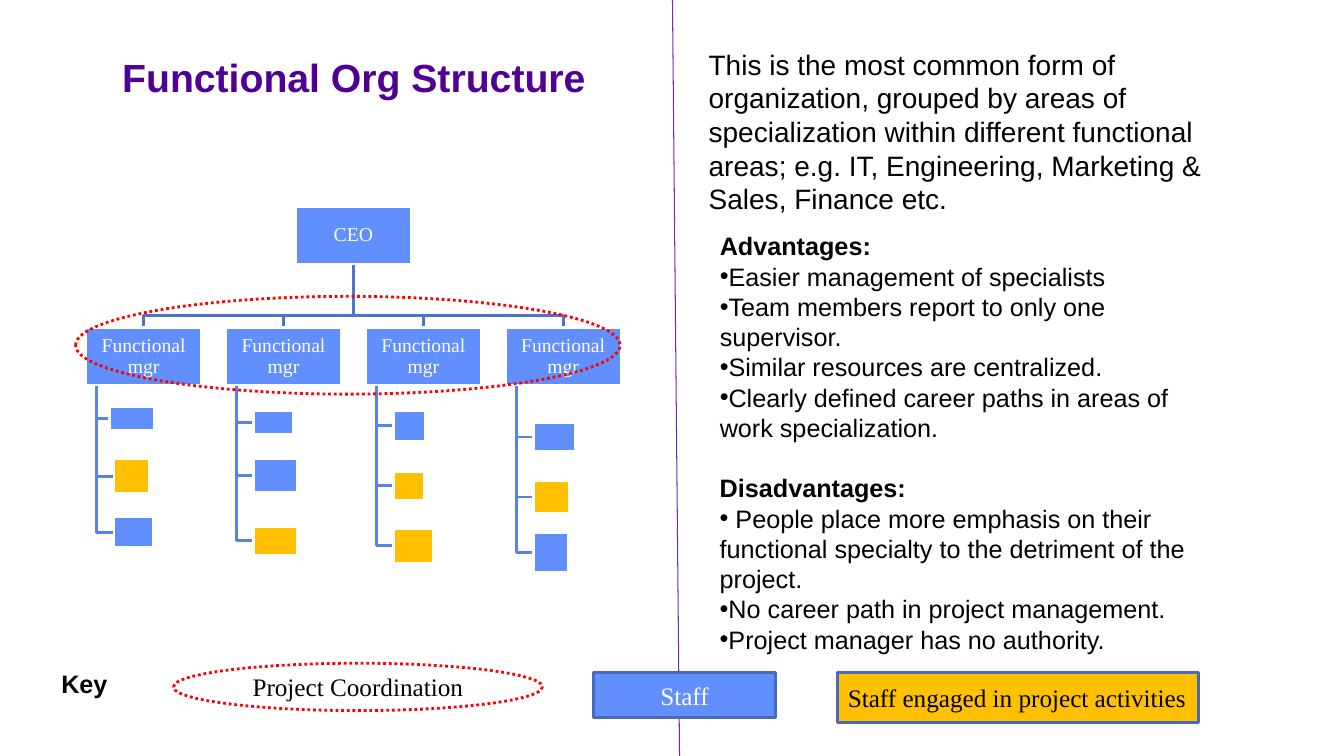
from dataclasses import dataclass

from lxml.etree import SubElement
from pptx import Presentation
from pptx.dml.color import RGBColor
from pptx.enum.dml import MSO_LINE
from pptx.enum.shapes import MSO_CONNECTOR, MSO_SHAPE
from pptx.enum.text import MSO_ANCHOR, MSO_AUTO_SIZE, PP_ALIGN
from pptx.oxml.ns import qn
from pptx.util import Inches, Pt

BLUE = RGBColor(0x61, 0x8F, 0xFD)
AMBER = RGBColor(0xFF, 0xC0, 0x00)
WHITE = RGBColor(0xFF, 0xFF, 0xFF)
BLACK = RGBColor(0x00, 0x00, 0x00)
RED = RGBColor(0xFF, 0x00, 0x00)
EDGE = RGBColor(0x48, 0x6A, 0xBB)
TOP_LINK = RGBColor(0x4E, 0x73, 0xCB)
STAFF_LINK = RGBColor(0x58, 0x82, 0xE6)
PURPLE = RGBColor(0x50, 0x00, 0x93)
DIVIDER = RGBColor(0x70, 0x30, 0xA0)
SANS, SERIF = "Arial", "Times New Roman"

CARD_WIDTH, CARD_HEIGHT = 1.15, 0.57
CEO_LEFT, CEO_TOP = 2.93, 2.05
MANAGER_LEFT, MANAGER_TOP, MANAGER_PITCH = 0.85, 3.25, 1.387
BUS_Y = 3.13
SPINE_OFFSET, STAFF_OFFSET = 0.11, 0.28


@dataclass
class Staff:
    top: float
    width: float
    height: float
    fill: RGBColor = BLUE
    shift: float = 0


@dataclass
class Passage:
    left: float
    top: float
    width: float
    height: float
    heading: str
    bullets: tuple[str, ...] = ()
    size: int = 18
    bold: bool = True


TEAMS = [
    [Staff(4.03, 0.44, 0.24, shift=-0.04), Staff(4.55, 0.35, 0.35, AMBER), Staff(5.13, 0.39, 0.3)],
    [Staff(4.07, 0.39, 0.24), Staff(4.55, 0.43, 0.34), Staff(5.22, 0.43, 0.29, AMBER)],
    [Staff(4.07, 0.32, 0.31), Staff(4.68, 0.31, 0.28, AMBER), Staff(5.24, 0.39, 0.35, AMBER)],
    [Staff(4.19, 0.42, 0.29), Staff(4.77, 0.36, 0.32, AMBER), Staff(5.28, 0.35, 0.4)],
]

PASSAGES = [
    Passage(6.93, 0.42, 5.51, 1.78,
            "This is the most common form of organization, grouped by areas of specialization within "
            "different functional areas; e.g. IT, Engineering, Marketing & Sales, Finance etc.",
            size=20, bold=False),
    Passage(7.04, 2.24, 4.92, 2.22, "Advantages:", (
        "Easier management of specialists",
        "Team members report to only one supervisor.",
        "Similar resources are centralized.",
        "Clearly defined career paths in areas of work specialization.")),
    Passage(7.04, 4.64, 4.84, 2.22, "Disadvantages:", (
        " People place more emphasis on their functional specialty to the detriment of the project.",
        "No career path in project management.",
        "Project manager has no authority.")),
    Passage(0.51, 6.58, 0.94, 0.4, "Key"),
]


def write(para, text: str, *, font: str = SANS, size: int = 18, color: RGBColor = BLACK,
          bold: bool = False, align: PP_ALIGN = PP_ALIGN.LEFT, spacing: float = 1.0,
          bullet: bool = False) -> None:
    """Fill a paragraph with one formatted span."""
    para.alignment = align
    para.line_spacing = spacing
    if bullet:
        properties = para._p.get_or_add_pPr()
        properties.set("marL", "0")
        properties.set("indent", "0")
        SubElement(properties, qn("a:buFont"), typeface=SANS)
        SubElement(properties, qn("a:buChar"), char="•")
    span = para.add_run()
    span.text = text
    span.font.name, span.font.size, span.font.bold = font, Pt(size), bold
    span.font.color.rgb = color


def add_box(shapes, left: float, top: float, width: float, height: float, *,
            kind: MSO_SHAPE = MSO_SHAPE.RECTANGLE, fill: RGBColor | None = BLUE,
            line: RGBColor = WHITE, dotted: bool = False):
    box = shapes.add_shape(kind, Inches(left), Inches(top), Inches(width), Inches(height))
    box.shadow.inherit = False
    if fill is None:
        box.fill.background()
    else:
        box.fill.solid()
        box.fill.fore_color.rgb = fill
    box.line.color.rgb = line
    box.line.width = Pt(2)
    if dotted:
        box.line.dash_style = MSO_LINE.ROUND_DOT
    box.text_frame.vertical_anchor = MSO_ANCHOR.MIDDLE
    return box


def add_card(shapes, left: float, top: float, text: str) -> None:
    frame = add_box(shapes, left, top, CARD_WIDTH, CARD_HEIGHT).text_frame
    frame.margin_left = frame.margin_right = Inches(0.01)
    frame.margin_top = frame.margin_bottom = Inches(0.01)
    write(frame.paragraphs[0], text, font=SERIF, size=14, color=WHITE,
          align=PP_ALIGN.CENTER, spacing=0.9)


def add_link(shapes, points: list[tuple[float, float]], color: RGBColor) -> None:
    corners = [(Inches(x), Inches(y)) for x, y in points]
    builder = shapes.build_freeform(*corners[0])
    builder.add_line_segments(corners[1:], close=False)
    link = builder.convert_to_shape()
    link.shadow.inherit = False
    link.fill.background()
    link.line.color.rgb = color
    link.line.width = Pt(2)


def add_passage(shapes, passage: Passage) -> None:
    box = shapes.add_textbox(Inches(passage.left), Inches(passage.top),
                             Inches(passage.width), Inches(passage.height))
    frame = box.text_frame
    frame.word_wrap = True
    write(frame.paragraphs[0], passage.heading, size=passage.size, bold=passage.bold)
    for bullet in passage.bullets:
        write(frame.add_paragraph(), bullet, size=passage.size, bullet=True)


def add_org_chart(shapes) -> None:
    lefts = [MANAGER_LEFT + MANAGER_PITCH * column for column in range(len(TEAMS))]
    ceo_middle = CEO_LEFT + CARD_WIDTH / 2
    # Links lie behind the boxes
    for left, team in zip(lefts, TEAMS):
        middle, spine = left + CARD_WIDTH / 2, left + SPINE_OFFSET
        add_link(shapes, [(ceo_middle, CEO_TOP + CARD_HEIGHT), (ceo_middle, BUS_Y),
                          (middle, BUS_Y), (middle, MANAGER_TOP)], TOP_LINK)
        for staff in team:
            y = staff.top + staff.height / 2
            add_link(shapes, [(spine, MANAGER_TOP + CARD_HEIGHT), (spine, y),
                              (left + STAFF_OFFSET + staff.shift, y)], STAFF_LINK)
    # Boxes
    add_card(shapes, CEO_LEFT, CEO_TOP, "CEO")
    for left, team in zip(lefts, TEAMS):
        add_card(shapes, left, MANAGER_TOP, "Functional mgr")
        for staff in team:
            add_box(shapes, left + STAFF_OFFSET + staff.shift, staff.top,
                    staff.width, staff.height, fill=staff.fill)


def add_title(page) -> None:
    title = page.shapes.title
    title.left, title.top = Inches(1.1), Inches(0.46)
    title.width, title.height = Inches(4.82), Inches(0.59)
    frame = title.text_frame
    frame.auto_size = MSO_AUTO_SIZE.NONE
    frame.word_wrap = True
    frame.vertical_anchor = MSO_ANCHOR.TOP
    write(frame.paragraphs[0], "Functional Org Structure", size=28, color=PURPLE, bold=True,
          align=PP_ALIGN.CENTER, spacing=1.04)


def main() -> None:
    deck = Presentation()
    deck.slide_width, deck.slide_height = Inches(13.33), Inches(7.5)
    page = deck.slides.add_slide(deck.slide_layouts[5])
    shapes = page.shapes
    add_title(page)

    # Organization chart and the coordination ring
    add_org_chart(shapes.add_group_shape().shapes)
    add_box(shapes, 0.75, 2.94, 5.4, 0.97, kind=MSO_SHAPE.OVAL, fill=None, line=RED, dotted=True)

    # Divider between chart and text
    divider = shapes.add_connector(MSO_CONNECTOR.STRAIGHT, Inches(6.67), 0, Inches(6.74), Inches(7.5))
    divider.line.color.rgb = DIVIDER
    divider.line.width = Pt(0.75)
    SubElement(divider._element.spPr, qn("a:effectLst"))

    # Key
    ring = add_box(shapes, 1.72, 6.58, 3.66, 0.47, kind=MSO_SHAPE.OVAL, fill=None, line=RED, dotted=True)
    staff = add_box(shapes, 5.89, 6.67, 1.8, 0.45, line=EDGE)
    engaged = add_box(shapes, 8.31, 6.67, 3.58, 0.5, fill=AMBER, line=EDGE)
    for box, text, color, align in (
            (ring, "Project Coordination", BLACK, PP_ALIGN.CENTER),
            (staff, "Staff", WHITE, PP_ALIGN.CENTER),
            (engaged, "Staff engaged in project activities", BLACK, PP_ALIGN.LEFT)):
        write(box.text_frame.paragraphs[0], text, font=SERIF, color=color, align=align)

    # Text passages
    for passage in PASSAGES:
        add_passage(shapes, passage)

    deck.save("out.pptx")


if __name__ == "__main__":
    main()
